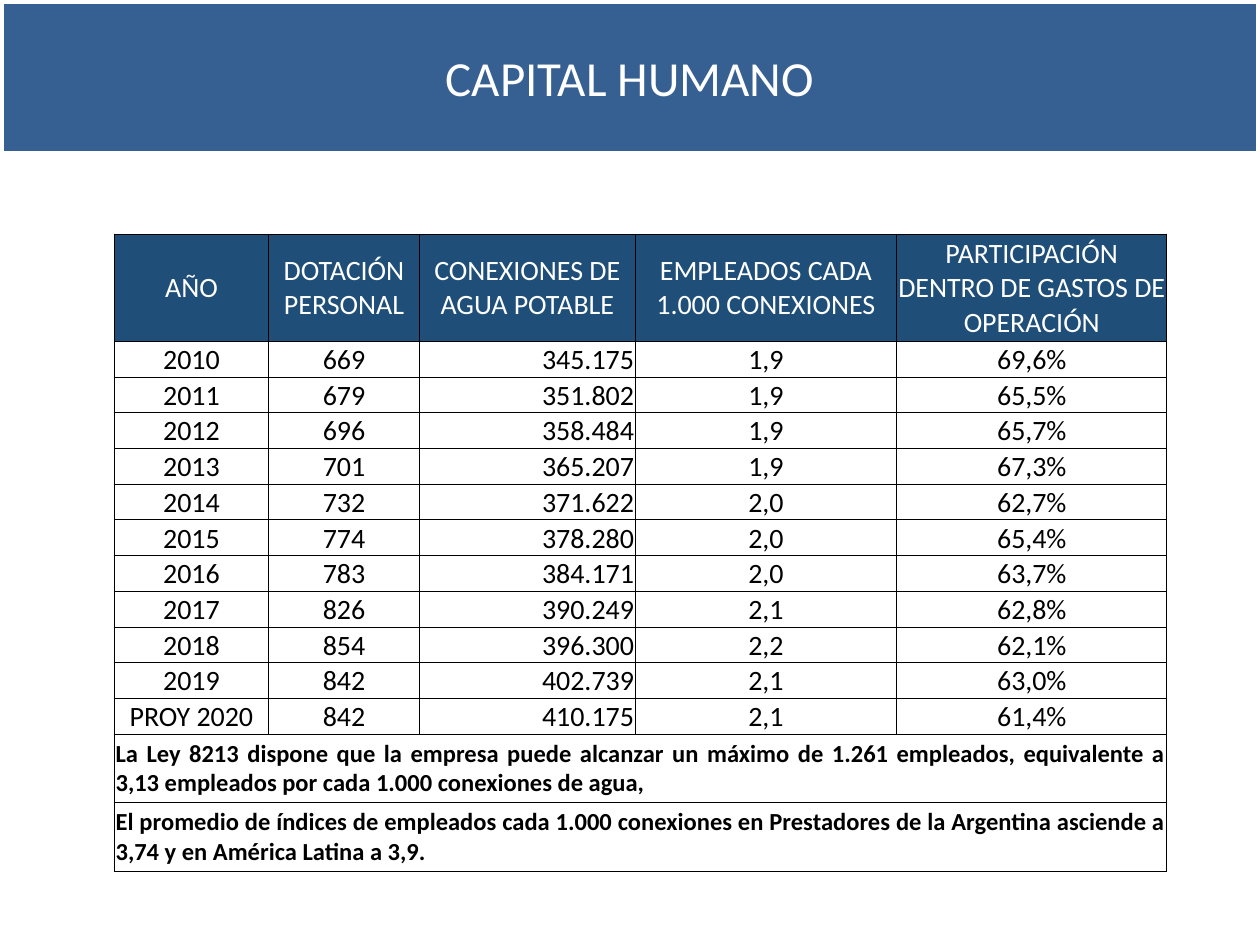
from dataclasses import dataclass
from typing import NamedTuple

from lxml import etree
from pptx import Presentation
from pptx import util as u
from pptx.dml.color import RGBColor
from pptx.enum import shapes, text
from pptx.oxml import ns


@dataclass(frozen=True)
class Theme:
    font: str = "Calibri"
    banner: str = "376092"
    header: str = "1F4E78"
    light: str = "FFFFFF"
    dark: str = "000000"
    title_size: int = 28
    table_size: int = 16
    note_size: int = 14
    banner_line: float = 4.5
    border: float = 0.5


class Style(NamedTuple):
    size: int
    color: str
    fill: str
    anchor: text.MSO_ANCHOR
    bold: bool = False


class Column(NamedTuple):
    heading: str
    width: float
    align: text.PP_ALIGN = text.PP_ALIGN.CENTER


class YearRecord(NamedTuple):
    year: str
    staff: str
    connections: str
    ratio: str
    share: str


class Note(NamedTuple):
    wording: str
    height: float


THEME = Theme()
TITLE = Style(THEME.title_size, THEME.light, THEME.banner, text.MSO_ANCHOR.MIDDLE)
HEADER = Style(THEME.table_size, THEME.light, THEME.header, text.MSO_ANCHOR.MIDDLE)
BODY = Style(THEME.table_size, THEME.dark, THEME.light, text.MSO_ANCHOR.BOTTOM)
NOTE = Style(THEME.note_size, THEME.dark, THEME.light, text.MSO_ANCHOR.MIDDLE, True)

HEADER_HEIGHT = 2.16
YEAR_HEIGHT = 0.72
COLUMNS = [
    Column("AÑO", 3.1),
    Column("DOTACIÓN PERSONAL", 3.05),
    Column("CONEXIONES DE AGUA POTABLE", 4.34, text.PP_ALIGN.RIGHT),
    Column("EMPLEADOS CADA 1.000 CONEXIONES", 5.28),
    Column("PARTICIPACIÓN DENTRO DE GASTOS DE OPERACIÓN", 5.44),
]
YEARS = [
    YearRecord("2010", "669", "345.175", "1,9", "69,6%"),
    YearRecord("2011", "679", "351.802", "1,9", "65,5%"),
    YearRecord("2012", "696", "358.484", "1,9", "65,7%"),
    YearRecord("2013", "701", "365.207", "1,9", "67,3%"),
    YearRecord("2014", "732", "371.622", "2,0", "62,7%"),
    YearRecord("2015", "774", "378.280", "2,0", "65,4%"),
    YearRecord("2016", "783", "384.171", "2,0", "63,7%"),
    YearRecord("2017", "826", "390.249", "2,1", "62,8%"),
    YearRecord("2018", "854", "396.300", "2,2", "62,1%"),
    YearRecord("2019", "842", "402.739", "2,1", "63,0%"),
    YearRecord("PROY 2020", "842", "410.175", "2,1", "61,4%"),
]
NOTES = [
    Note("La Ley 8213 dispone que la empresa puede alcanzar un máximo de 1.261 empleados, "
         "equivalente a 3,13 empleados por cada 1.000 conexiones de agua,", 1.37),
    Note("El promedio de índices de empleados cada 1.000 conexiones en Prestadores de la "
         "Argentina asciende a 3,74 y en América Latina a 3,9.", 1.39),
]


def paint(fill, color: str) -> None:
    fill.solid()
    fill.fore_color.rgb = RGBColor.from_string(color)


def write(frame, wording: str, style: Style, align: text.PP_ALIGN) -> None:
    frame.text = wording
    para = frame.paragraphs[0]
    para.alignment = align
    for span in para.runs:
        span.font.name = THEME.font
        span.font.size = u.Pt(style.size)
        span.font.bold = style.bold
        span.font.color.rgb = RGBColor.from_string(style.color)


def add_borders(cell) -> None:
    properties = cell._tc.get_or_add_tcPr()
    for side in ("L", "R", "T", "B"):
        line = etree.SubElement(properties, ns.qn(f"a:ln{side}"), w=str(u.Pt(THEME.border)))
        solid = etree.SubElement(line, ns.qn("a:solidFill"))
        etree.SubElement(solid, ns.qn("a:srgbClr"), val=THEME.dark)


def fill_cell(cell, wording: str, style: Style, align: text.PP_ALIGN) -> None:
    write(cell.text_frame, wording, style, align)
    cell.vertical_anchor = style.anchor
    cell.margin_left = cell.margin_right = cell.margin_top = u.Cm(0.02)
    cell.margin_bottom = 0
    paint(cell.fill, style.fill)


def add_banner(page, width: int) -> None:
    box = page.shapes.add_shape(shapes.MSO_SHAPE.RECTANGLE, 0, 0, width, u.Cm(3.12))
    box.shadow.inherit = False
    paint(box.fill, TITLE.fill)
    paint(box.line.fill, THEME.light)
    box.line.width = u.Pt(THEME.banner_line)
    box.text_frame.word_wrap = False
    box.text_frame.vertical_anchor = TITLE.anchor
    write(box.text_frame, "CAPITAL HUMANO", TITLE, text.PP_ALIGN.CENTER)


def add_staff_table(page) -> None:
    heights = [HEADER_HEIGHT, *[YEAR_HEIGHT] * len(YEARS), *[note.height for note in NOTES]]
    table = page.shapes.add_table(
        len(heights), len(COLUMNS), u.Cm(2.31), u.Cm(4.72),
        u.Cm(sum(column.width for column in COLUMNS)), u.Cm(sum(heights)),
    ).table
    table.first_row = table.horz_banding = False
    for row, height in zip(table.rows, heights):
        row.height = u.Cm(height)
    for cell in table.iter_cells():
        add_borders(cell)

    for index, column in enumerate(COLUMNS):
        table.columns[index].width = u.Cm(column.width)
        fill_cell(table.cell(0, index), column.heading, HEADER, text.PP_ALIGN.CENTER)
        for row, record in enumerate(YEARS, 1):
            fill_cell(table.cell(row, index), record[index], BODY, column.align)

    for row, note in enumerate(NOTES, len(YEARS) + 1):
        cell = table.cell(row, 0)
        cell.merge(table.cell(row, len(COLUMNS) - 1))
        fill_cell(cell, note.wording, NOTE, text.PP_ALIGN.JUSTIFY)


def main() -> None:
    deck = Presentation()
    deck.slide_width, deck.slide_height = u.Cm(25.4), u.Cm(19.05)
    page = deck.slides.add_slide(deck.slide_layouts[6])
    add_banner(page, deck.slide_width)
    add_staff_table(page)
    deck.save("out.pptx")


if __name__ == "__main__":
    main()
